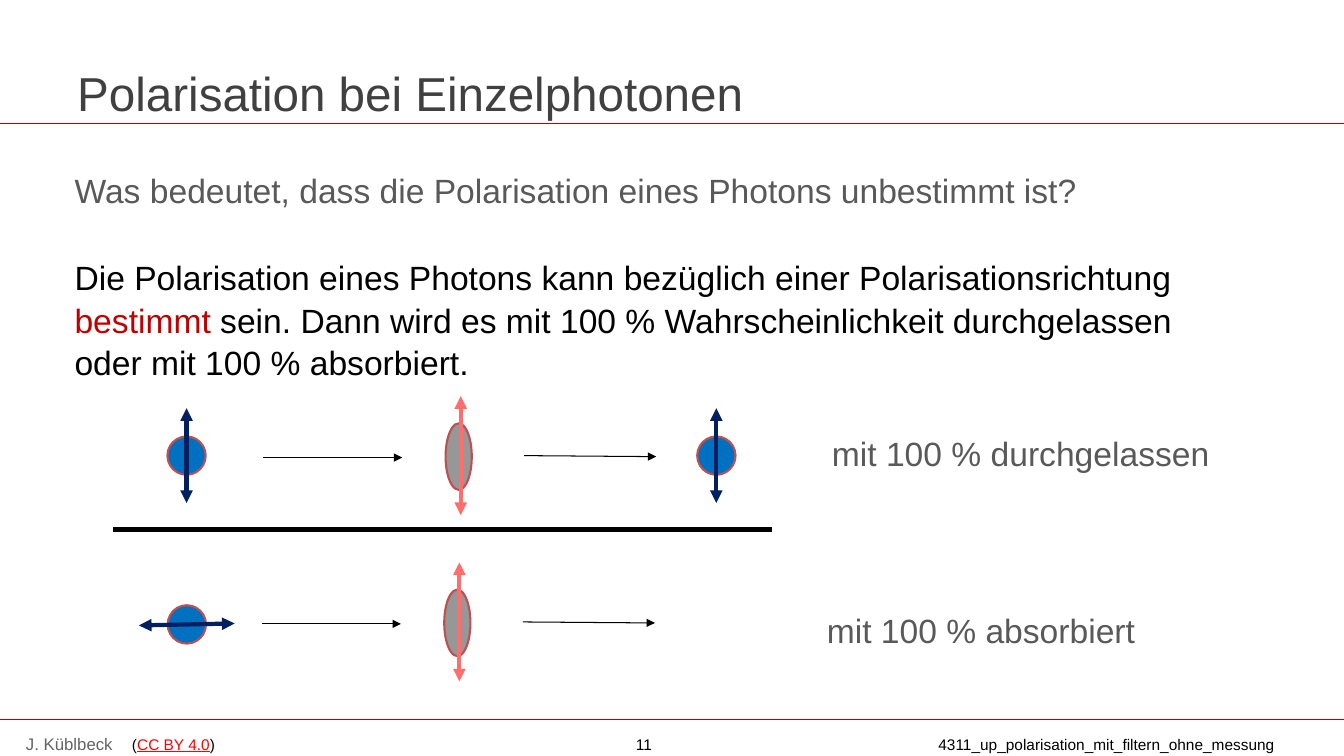
from dataclasses import dataclass

from lxml import etree
from pptx import Presentation
from pptx.dml.color import RGBColor
from pptx.enum.shapes import MSO_CONNECTOR, MSO_SHAPE
from pptx.enum.text import MSO_ANCHOR
from pptx.oxml.ns import qn
from pptx.util import Inches, Pt

LINE = MSO_CONNECTOR.STRAIGHT
OVAL = MSO_SHAPE.OVAL
TOP, MIDDLE = MSO_ANCHOR.TOP, MSO_ANCHOR.MIDDLE


@dataclass(frozen=True)
class Theme:
    font: str = "Arial"
    title: int = 34
    body: int = 24
    name: int = 12
    foot: int = 11
    black: str = "000000"
    dark: str = "404040"
    gray: str = "595959"
    pale: str = "646464"
    rule: str = "BF0000"
    mark: str = "C00000"
    link: str = "FF0000"
    photon: str = "0070C0"
    spin: str = "002060"
    filter: str = "979797"
    axis: str = "FF6D6D"
    edge: str = "BD5151"


class Board:
    """Draws on one slide; all places are in percent of its width and height."""

    def __init__(self, deck, theme):
        self.wide, self.high = deck.slide_width, deck.slide_height
        self.theme = theme
        self.shapes = deck.slides.add_slide(deck.slide_layouts[6]).shapes

    def x(self, part):
        return round(self.wide * part / 100)

    def y(self, part):
        return round(self.high * part / 100)

    def text(self, box, paras, size, color, anchor=TOP, lead=1.0, gaps=(0,)):
        """Each paragraph is a list of (text, color) runs; None breaks the line."""
        left, top, width, height = box
        frame = self.shapes.add_textbox(
            self.x(left), self.y(top), self.x(width), self.y(height)).text_frame
        frame.word_wrap = True
        frame.vertical_anchor = anchor
        frame.margin_left = frame.margin_right = 0
        for i, (runs, gap) in enumerate(zip(paras, gaps)):
            para = frame.add_paragraph() if i else frame.paragraphs[0]
            para.line_spacing = lead
            para.space_before = Pt(gap)
            para.font.name, para.font.size = self.theme.font, Pt(size)
            para.font.color.rgb = RGBColor.from_string(color)
            for part in runs:
                if part is None:
                    para.add_line_break()
                    continue
                run = para.add_run()
                run.text, tint = part
                if tint != color:
                    run.font.color.rgb = RGBColor.from_string(tint)
                if tint == self.theme.link:
                    run.font.underline = True

    def line(self, start, end, color, weight, heads=()):
        """heads names the arrow ends: headEnd at start, tailEnd at end."""
        link = self.shapes.add_connector(
            LINE, self.x(start[0]), self.y(start[1]), self.x(end[0]), self.y(end[1]))
        link.line.color.rgb = RGBColor.from_string(color)
        link.line.width = Pt(weight)
        stroke = link.line._get_or_add_ln()
        for head in heads:
            etree.SubElement(stroke, qn("a:" + head), type="triangle")
        etree.SubElement(link._element.spPr, qn("a:effectLst"))

    def oval(self, mid, size, fill):
        (x, y), (width, height) = mid, size
        shape = self.shapes.add_shape(
            OVAL, self.x(x - width / 2), self.y(y - height / 2),
            self.x(width), self.y(height))
        shape.shadow.inherit = False
        shape.fill.solid()
        shape.fill.fore_color.rgb = RGBColor.from_string(fill)
        shape.line.color.rgb = RGBColor.from_string(self.theme.edge)
        shape.line.width = Pt(1.5)

    def swing(self, mid, reach, color):
        """Double arrow reaching equally far to both sides of mid."""
        (x, y), (dx, dy) = mid, reach
        self.line((x - dx, y - dy), (x + dx, y + dy), color, 3,
                  ("headEnd", "tailEnd"))

    def ray(self, start, end):
        self.line(start, end, self.theme.black, 0.75, ("tailEnd",))

    def photon(self, x, y, reach):
        self.oval((x, y), (2.85, 5.07), self.theme.photon)
        self.swing((x, y), reach, self.theme.spin)

    def setup(self, x, y):
        """Filter with its axis, and the rays before and behind it."""
        self.oval((x, y), (1.95, 8.8), self.theme.filter)
        self.ray((x - 14.55, y + 0.13), (x - 4.2, y + 0.13))
        self.swing((x + 0.15, y - 0.13), (0, 7.87), self.theme.axis)
        self.ray((x + 4.87, y - 0.13), (x + 14.7, y))

    def label(self, x, y, words):
        self.text((x, y, 30.3, 10), [[(words, self.theme.gray)]],
                  self.theme.body, self.theme.gray, lead=1.05, gaps=(3,))


def frame(board, theme):
    board.text((5.75, 8, 89, 8.4), [[("Polarisation bei Einzelphotonen", theme.dark)]],
               theme.title, theme.dark, MIDDLE)
    for y in (16.4, 95.2):
        board.line((0, y), (100, y), theme.rule, 0.75)
    board.text((1.93, 96.4, 7.8, 4), [[("J. Küblbeck", theme.pale)]],
               theme.name, theme.pale, MIDDLE)
    notes = (
        (9.82, 12, [("(", theme.black), ("CC BY 4.0", theme.link), (")", theme.black)]),
        (47.32, 5, [("11", theme.black)]),
        (69.82, 28.5, [("4311_up_polarisation_mit_filtern_ohne_messung", theme.black)]),
    )
    for x, width, runs in notes:
        board.text((x, 96.4, width, 4), [runs], theme.foot, theme.black, MIDDLE)


def main():
    deck = Presentation()
    deck.slide_width, deck.slide_height = Inches(13.33), Inches(7.5)
    theme = Theme()
    board = Board(deck, theme)
    frame(board, theme)

    ask = [("Was bedeutet, dass die Polarisation eines Photons unbestimmt ist?",
            theme.gray)]
    reply = [
        ("Die Polarisation eines Photons kann bezüglich einer "
         "Polarisationsrichtung ", theme.black),
        ("bestimmt", theme.mark),
        (" sein. Dann wird es mit 100 % Wahrscheinlichkeit durchgelassen",
         theme.black),
        None,
        ("oder mit 100 % absorbiert.", theme.black),
    ]
    board.text((5.55, 21.6, 91.65, 29), [ask, reply], theme.body, theme.black,
               lead=1.05, gaps=(3, 32))

    upright, level = (0, 6.27), (3.56, -0.13)
    board.setup(34.13, 60.4)
    for x in (13.88, 53.3):
        board.photon(x, 60.27, upright)
    board.label(61.9, 56.4, "mit 100 % durchgelassen")

    board.line((8.4, 70), (57.45, 70), theme.black, 3.75)

    board.setup(34.03, 82.4)
    board.photon(13.9, 82.6, level)
    board.label(61.52, 79.73, "mit 100 % absorbiert")
    deck.save("out.pptx")


if __name__ == "__main__":
    main()
